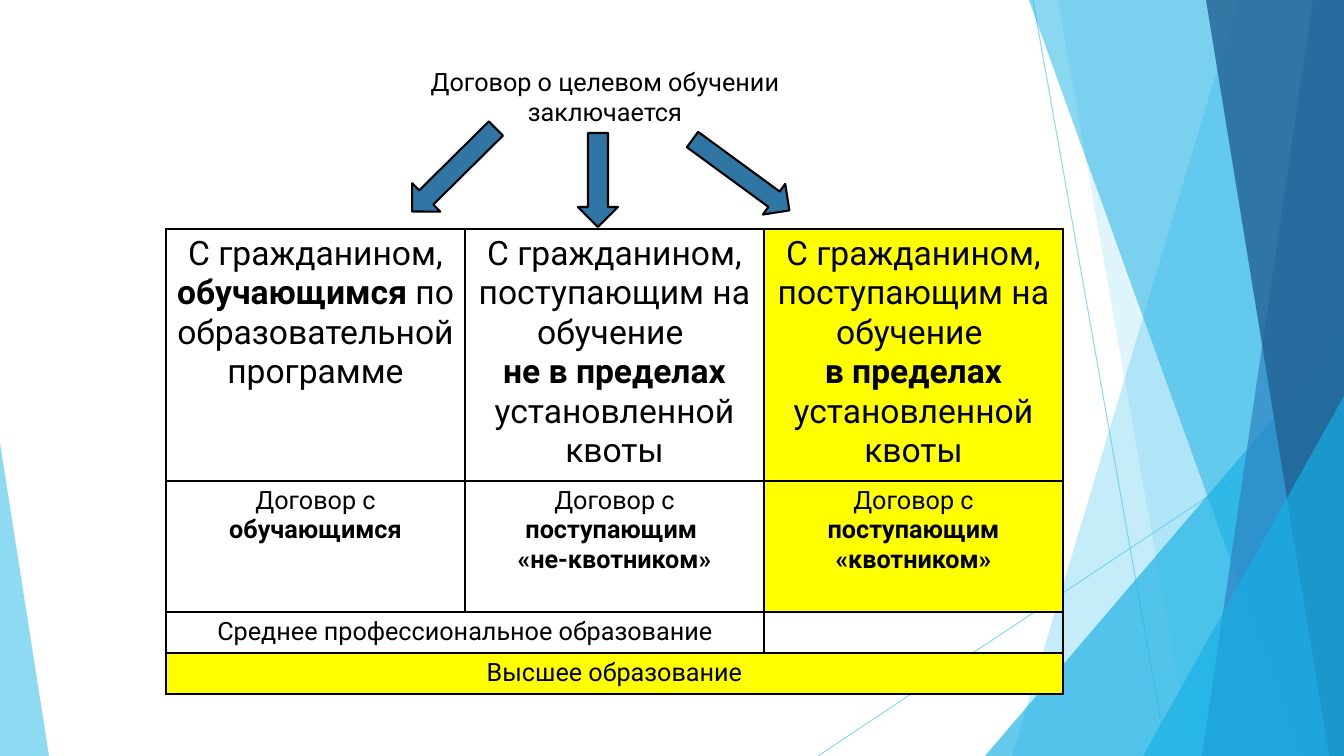
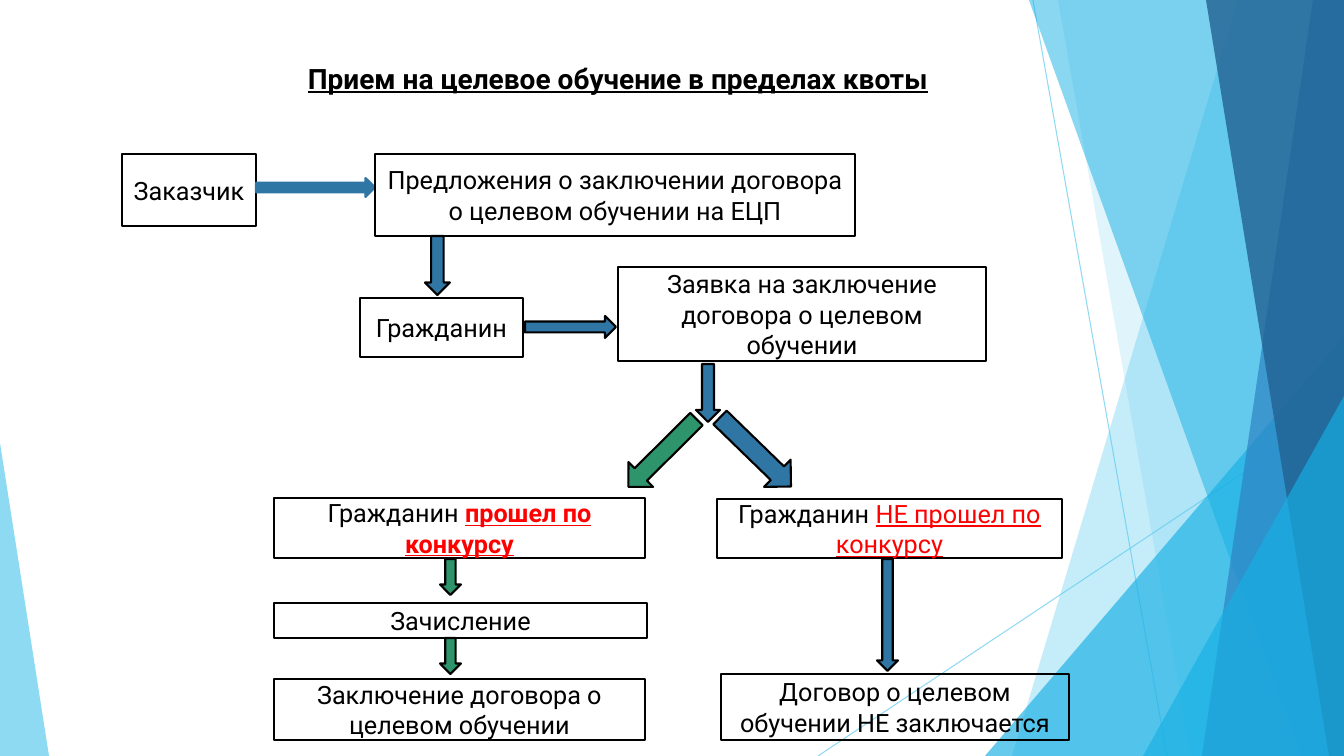
from dataclasses import dataclass

from lxml import etree
from pptx import Presentation
from pptx.dml.color import RGBColor
from pptx.enum.shapes import MSO_CONNECTOR, MSO_SHAPE
from pptx.enum.text import MSO_ANCHOR, MSO_AUTO_SIZE, PP_ALIGN
from pptx.oxml.ns import qn
from pptx.util import Pt

RECT, TRIANGLE = MSO_SHAPE.RECTANGLE, MSO_SHAPE.ISOSCELES_TRIANGLE
DOWN, RIGHT = MSO_SHAPE.DOWN_ARROW, MSO_SHAPE.RIGHT_ARROW
STRAIGHT = MSO_CONNECTOR.STRAIGHT
TOP, MIDDLE = MSO_ANCHOR.TOP, MSO_ANCHOR.MIDDLE
CENTER = PP_ALIGN.CENTER

SLIDE_W, SLIDE_H = 1344, 756
EMU_PER_PX = 12192000 / SLIDE_W
TITLE_ONLY = 5


@dataclass(frozen=True)
class Theme:
    font: str = "Roboto"
    text: str = "000000"
    outline: str = "000000"
    paper: str = "FFFFFF"
    alert: str = "FF0000"
    highlight: str = "FFFF00"
    blue: str = "3076A4"
    green: str = "2E946B"
    sky: str = "5FCBEF"
    cyan: str = "17B0E4"
    steel: str = "2E83C3"
    navy: str = "226292"
    body: int = 18
    heading: int = 20
    large: int = 24
    border: float = 1
    stroke: float = 1.5
    hairline: float = 0.75


T = Theme()
BOLD = {"bold": True}
BOLD_UNDERLINE = {"bold": True, "underline": True}
ALERT = {"underline": True, "color": T.alert}
BOLD_ALERT = {**ALERT, "bold": True}


def px(*lengths):
    return [round(n * EMU_PER_PX) for n in lengths]


def rgb(color):
    return RGBColor.from_string(color)


def paint(shape, fill=None, line=None, width=T.stroke):
    """Set fill and outline; None leaves either of them clear."""
    shape.shadow.inherit = False
    if fill:
        shape.fill.solid()
        shape.fill.fore_color.rgb = rgb(fill)
    else:
        shape.fill.background()
    if line:
        shape.line.color.rgb = rgb(line)
        shape.line.width = Pt(width)
    else:
        shape.line.fill.background()


def set_alpha(shape, percent):
    for color in shape.element.iter(qn("a:srgbClr")):
        etree.SubElement(color, qn("a:alpha"), val=str(percent * 1000))


def write(tf, paragraphs, size=T.body):
    """Fill a frame with paragraphs, each a list of strings or (string, style)."""
    tf.word_wrap = True
    for i, runs in enumerate(paragraphs):
        p = tf.add_paragraph() if i else tf.paragraphs[0]
        p.alignment = CENTER
        for run in runs:
            text, style = (run, {}) if isinstance(run, str) else run
            r = p.add_run()
            r.text = text
            r.font.name, r.font.size = T.font, Pt(size)
            r.font.bold = style.get("bold", False)
            r.font.underline = style.get("underline", False)
            r.font.color.rgb = rgb(style.get("color", T.text))


def add_title(s, box, paragraphs, size=T.body):
    title = s.shapes.title
    title.left, title.top, title.width, title.height = px(*box)
    tf = title.text_frame
    tf.auto_size, tf.vertical_anchor = MSO_AUTO_SIZE.NONE, TOP
    write(tf, paragraphs, size)


def add_box(s, box, runs, fill=T.paper):
    sp = s.shapes.add_shape(RECT, *px(*box))
    paint(sp, fill, T.outline)
    sp.text_frame.vertical_anchor = MIDDLE
    write(sp.text_frame, [runs])


def add_arrow(s, kind, box, fill=T.blue, line=T.outline, rotation=0):
    sp = s.shapes.add_shape(kind, *px(*box))
    sp.rotation = rotation
    paint(sp, fill, line)


def add_ray(s, start, end):
    ray = s.shapes.add_connector(STRAIGHT, *px(*start, *end))
    ray.line.color.rgb = rgb(T.sky)
    ray.line.width = Pt(T.hairline)
    etree.SubElement(ray.element.spPr, qn("a:effectLst"))
    set_alpha(ray, 70)


def add_band(s, top_x, bottom_x, color, alpha):
    """Draw a slanted band that reaches to the right edge of the slide."""
    builder = s.shapes.build_freeform(top_x, 0, scale=EMU_PER_PX)
    builder.add_line_segments([(SLIDE_W, 0), (SLIDE_W, SLIDE_H), (bottom_x, SLIDE_H)])
    band = builder.convert_to_shape()
    paint(band, color)
    set_alpha(band, alpha)


def add_corner(s, left, top, width, apex, color, alpha):
    """Draw a triangle standing on the bottom edge, apex 0 left or 1 right."""
    corner = s.shapes.add_shape(TRIANGLE, *px(left, top, width, SLIDE_H - top))
    corner.adjustments[0] = apex
    paint(corner, color)
    set_alpha(corner, alpha)


def decorate_layout(s):
    """Draw the facets and move them to the layout, behind its placeholders."""
    count = len(s.shapes)
    add_ray(s, (1033, 0), (1167, SLIDE_H))
    add_ray(s, (SLIDE_W, 406), (818, SLIDE_H))
    add_band(s, 1238, 1012, T.sky, 36)
    add_band(s, 1058, 1191, T.sky, 20)
    add_corner(s, 985, 336, 359, 1, T.cyan, 66)
    add_band(s, 1029, 1301, T.cyan, 50)
    add_band(s, 1313, 1202, T.steel, 70)
    add_band(s, 1206, 1329, T.navy, 80)
    add_corner(s, 1143, 396, 201, 1, T.cyan, 66)
    add_corner(s, 0, 443, 49, 0, T.sky, 70)
    tree = s.slide_layout.shapes.element
    for i, facet in enumerate(list(s.shapes)[count:]):
        facet.element.xpath(".//p:cNvPr")[0].set("id", str(100 + i))
        tree.insert(2 + i, facet.element)


def set_borders(cell):
    tc_pr = cell._tc.get_or_add_tcPr()
    for side in ("lnL", "lnR", "lnT", "lnB"):
        ln = etree.SubElement(tc_pr, qn(f"a:{side}"), w=str(Pt(T.border)))
        fill = etree.SubElement(ln, qn("a:solidFill"))
        etree.SubElement(fill, qn("a:srgbClr"), val=T.outline)


def add_contract_table(s):
    col_w, row_heights = 299, (252, 131, 41, 41)
    applicant = ["С гражданином, поступающим на обучение "]
    quota = "установленной квоты"
    rows = [
        [
            [["С гражданином, ", ("обучающимся", BOLD), " по образовательной программе"]],
            [applicant, [("не в пределах ", BOLD), quota]],
            [applicant, [("в пределах ", BOLD), quota]],
        ],
        [
            [["Договор с ", ("обучающимся", BOLD)]],
            [["Договор с ", ("поступающим ", BOLD)], [("«не-квотником»", BOLD)]],
            [["Договор с ", ("поступающим «квотником»", BOLD)]],
        ],
        [[["Среднее профессиональное образование"]], [], []],
        [[["Высшее образование"]], [], []],
    ]
    highlighted = {(0, 2), (1, 2), (3, 0), (3, 1), (3, 2)}
    frame = s.shapes.add_table(len(rows), 3, *px(166, 229, 3 * col_w, sum(row_heights)))
    table = frame.table
    table.first_row = table.horz_banding = False
    for column in table.columns:
        column.width = px(col_w)[0]
    for i, cells in enumerate(rows):
        table.rows[i].height = px(row_heights[i])[0]
        for j, paragraphs in enumerate(cells):
            cell = table.cell(i, j)
            set_borders(cell)
            if (i, j) in highlighted:
                cell.fill.solid()
                cell.fill.fore_color.rgb = rgb(T.highlight)
            else:
                cell.fill.background()
            write(cell.text_frame, paragraphs, T.body if i else T.large)
    table.cell(2, 0).merge(table.cell(2, 1))
    table.cell(3, 0).merge(table.cell(3, 2))


def build_contract_slide(s):
    add_title(s, (120, 61, 970, 72), [["Договор о целевом обучении"], ["заключается"]])
    add_arrow(s, DOWN, (434, 111, 40, 118), rotation=45.3)
    add_arrow(s, DOWN, (578, 133, 40, 94))
    add_arrow(s, DOWN, (722, 115, 38, 120), rotation=306.2)
    add_contract_table(s)


def build_admission_slide(s):
    heading = ("Прием на целевое обучение в пределах квоты", BOLD_UNDERLINE)
    add_title(s, (168, 56, 900, 44), [[heading]], T.heading)

    add_box(s, (122, 154, 134, 72), ["Заказчик"])
    add_arrow(s, RIGHT, (256, 178, 119, 19), line=T.blue)
    add_box(s, (375, 154, 480, 82),
            ["Предложения о заключении договора о целевом обучении на ЕЦП"])
    add_arrow(s, DOWN, (425, 236, 25, 59))
    add_box(s, (360, 298, 163, 59), ["Гражданин"])
    add_arrow(s, RIGHT, (525, 316, 91, 22))
    add_box(s, (618, 267, 368, 94), ["Заявка на заключение договора о целевом обучении"])
    add_arrow(s, DOWN, (696, 364, 24, 58))

    add_arrow(s, DOWN, (645, 405, 35, 96), T.green, rotation=45.2)
    add_box(s, (274, 498, 371, 60), ["Гражданин ", ("прошел по конкурсу", BOLD_ALERT)])
    add_arrow(s, DOWN, (440, 559, 21, 36), T.green)
    add_box(s, (274, 603, 373, 35), ["Зачисление"])
    add_arrow(s, DOWN, (440, 638, 21, 36), T.green)
    add_box(s, (274, 679, 371, 61), ["Заключение договора о целевом обучении"], None)

    add_arrow(s, RIGHT, (706, 433, 99, 38), rotation=44.2)
    add_box(s, (717, 499, 345, 59), ["Гражданин ", ("НЕ прошел по конкурсу", ALERT)], None)
    add_arrow(s, DOWN, (877, 559, 21, 112))
    add_box(s, (721, 674, 348, 66), ["Договор о целевом обучении НЕ заключается"], None)


def main():
    prs = Presentation()
    prs.slide_width, prs.slide_height = px(SLIDE_W, SLIDE_H)
    layout = prs.slide_layouts[TITLE_ONLY]
    contract, admission = [prs.slides.add_slide(layout) for _ in range(2)]
    decorate_layout(contract)
    build_contract_slide(contract)
    build_admission_slide(admission)
    prs.save("out.pptx")


if __name__ == "__main__":
    main()
